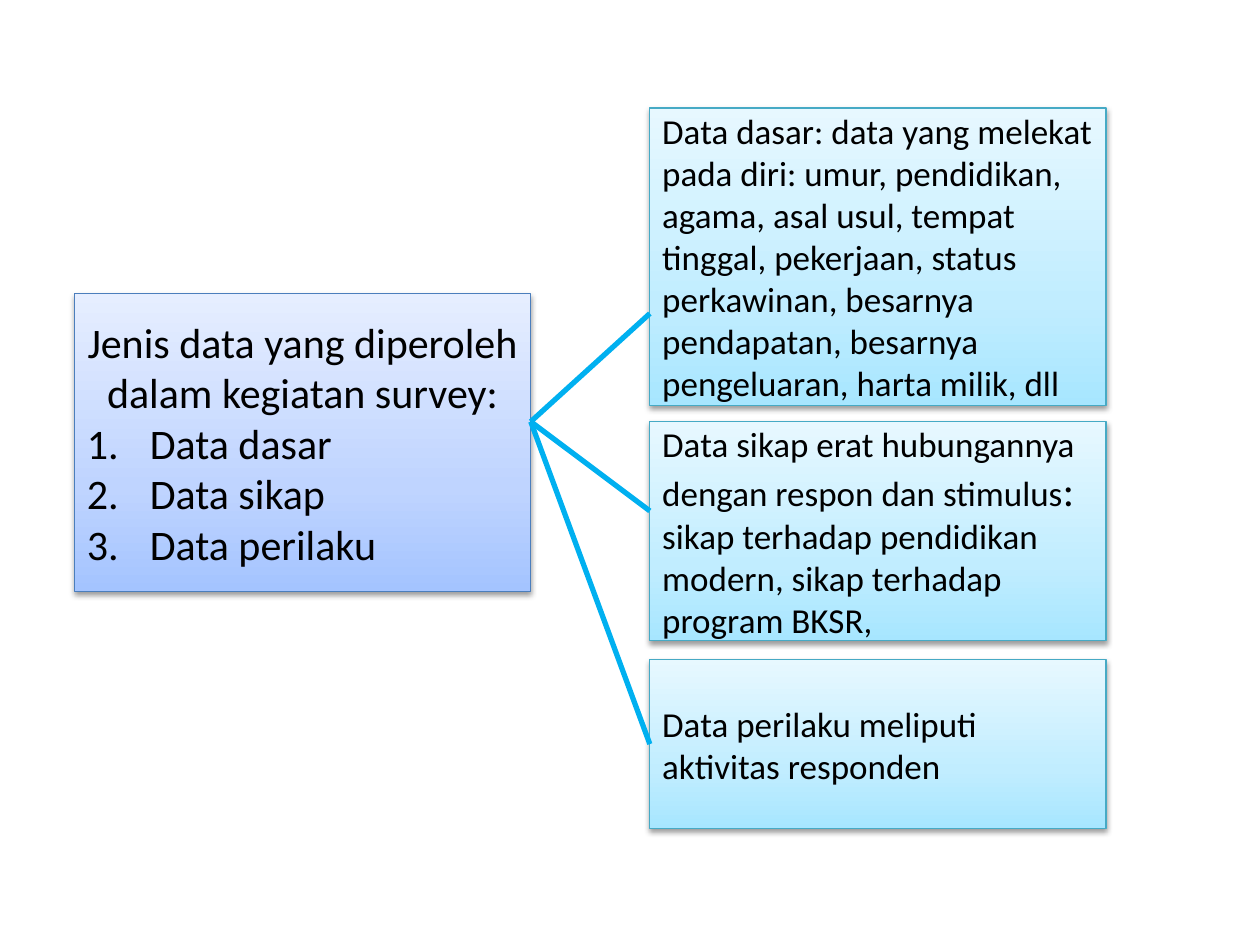
from copy import deepcopy

from pptx import Presentation
from pptx.dml.color import RGBColor
from pptx.enum.shapes import MSO_CONNECTOR, MSO_SHAPE
from pptx.enum.text import MSO_ANCHOR, PP_ALIGN
from pptx.oxml import parse_xml
from pptx.oxml.ns import nsdecls, qn
from pptx.oxml.xmlchemy import OxmlElement as Element
from pptx.util import Cm, Pt

BLACK = RGBColor(0x00, 0x00, 0x00)
SKY = RGBColor(0x00, 0xB0, 0xF0)
BLUE_LINE = RGBColor(0x4B, 0x7E, 0xBC)
AQUA_LINE = RGBColor(0x46, 0xAA, 0xC5)
BLUES = (RGBColor(0xA4, 0xC4, 0xFF), RGBColor(0xBF, 0xD4, 0xFF), RGBColor(0xE6, 0xEE, 0xFF))
AQUAS = (RGBColor(0xA7, 0xE6, 0xFF), RGBColor(0xC1, 0xED, 0xFF), RGBColor(0xE7, 0xF8, 0xFF))
STOPS = (0, 0.35, 1)

FONT = "Calibri"
BOX_W = 9.2
TOPIC_X, DETAIL_X = 1.5, 13.1
FORK_X, FORK_Y = TOPIC_X + BOX_W, 8.5

HEADING = "Jenis data yang diperoleh dalam kegiatan survey:"
KINDS = ("Data dasar", "Data sikap", "Data perilaku")
DETAILS = (
    (2.18, 6, 6.32, [
        ("Data dasar: data yang melekat pada diri: umur, pendidikan, agama, asal usul, "
         "tempat tinggal, pekerjaan, status perkawinan, besarnya pendapatan, "
         "besarnya pengeluaran, harta milik, dll", 20)]),
    (8.5, 4.42, 10.3, [
        ("Data sikap erat hubungannya dengan respon dan stimulus", 20),
        (": ", 24),
        ("sikap terhadap pendidikan modern, sikap terhadap program BKSR,", 20)]),
    (13.3, 3.4, None, [("Data perilaku meliputi aktivitas responden", 20)]),
)


def fill_gradient(sp, colors):
    """Fill a shape with a three-stop gradient rising from the bottom."""
    sp.fill.gradient()
    sp.fill.gradient_angle = 90
    stop_list = sp._element.spPr.find(f".//{qn('a:gsLst')}")
    stop_list.append(deepcopy(stop_list[0]))
    for stop, position, color in zip(sp.fill.gradient_stops, STOPS, colors):
        stop.position = position
        stop.color.rgb = color


def add_shadow(sp):
    """Give a shape a soft shadow straight below it."""
    sp.shadow.inherit = False
    sp._element.spPr.find(qn("a:effectLst")).append(parse_xml(
        f'<a:outerShdw {nsdecls("a")} blurRad="40000" dist="20000" dir="5400000" rotWithShape="0">'
        '<a:srgbClr val="000000"><a:alpha val="38000"/></a:srgbClr></a:outerShdw>'))


def add_box(slide, x, y, h, colors, line_color):
    """Add a shaded rectangle ready for text."""
    sp = slide.shapes.add_shape(MSO_SHAPE.RECTANGLE, Cm(x), Cm(y), Cm(BOX_W), Cm(h))
    fill_gradient(sp, colors)
    sp.line.color.rgb = line_color
    sp.line.width = Pt(0.75)
    add_shadow(sp)
    sp.text_frame.word_wrap = True
    sp.text_frame.vertical_anchor = MSO_ANCHOR.MIDDLE
    return sp


def add_runs(p, runs, align=PP_ALIGN.LEFT):
    """Add (text, size) runs to a paragraph."""
    p.alignment = align
    for text, size in runs:
        r = p.add_run()
        r.text = text
        r.font.name = FONT
        r.font.size = Pt(size)
        r.font.color.rgb = BLACK


def number_paragraph(p):
    """Number a paragraph with a hanging indent."""
    pPr = p._p.get_or_add_pPr()
    pPr.set("marL", str(Cm(1.27)))
    pPr.set("indent", str(-Cm(1.27)))
    bullet = Element("a:buAutoNum")
    bullet.set("type", "arabicPeriod")
    pPr.append(bullet)


def add_branch(slide, detail, end_y):
    """Draw a line from the fork to a detail box, joined unless end_y is given."""
    line = slide.shapes.add_connector(
        MSO_CONNECTOR.STRAIGHT, Cm(FORK_X), Cm(FORK_Y), Cm(DETAIL_X), Cm(end_y or FORK_Y))
    if end_y is None:
        line.end_connect(detail, 1)
    line.line.color.rgb = SKY
    line.line.width = Pt(3)
    line._element.spPr.append(Element("a:effectLst"))


def main():
    """Build the slide and save it."""
    prs = Presentation()
    prs.slide_width, prs.slide_height = Cm(25.4), Cm(19.05)
    slide = prs.slides.add_slide(prs.slide_layouts[6])

    tf = add_box(slide, TOPIC_X, 5.92, 6, BLUES, BLUE_LINE).text_frame
    add_runs(tf.paragraphs[0], [(HEADING, 24)], PP_ALIGN.CENTER)
    for kind in KINDS:
        p = tf.add_paragraph()
        add_runs(p, [(kind, 24)])
        number_paragraph(p)

    branches = []
    for y, h, end_y, runs in DETAILS:
        sp = add_box(slide, DETAIL_X, y, h, AQUAS, AQUA_LINE)
        add_runs(sp.text_frame.paragraphs[0], runs)
        branches.append((sp, end_y))
    for sp, end_y in branches:
        add_branch(slide, sp, end_y)

    prs.save("out.pptx")


if __name__ == "__main__":
    main()
